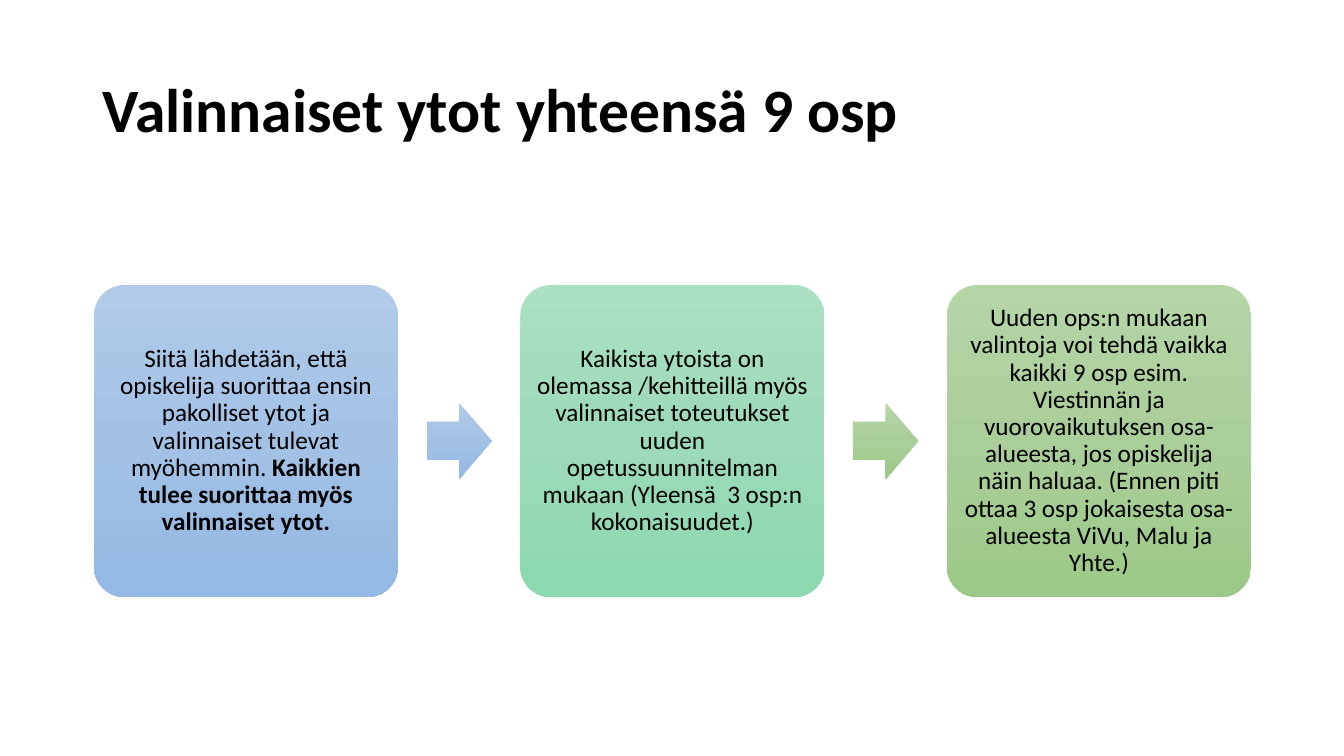
from copy import deepcopy

from pptx import Presentation
from pptx.dml.color import RGBColor
from pptx.enum.shapes import MSO_SHAPE
from pptx.enum.text import MSO_ANCHOR, MSO_AUTO_SIZE, PP_ALIGN
from pptx.oxml.ns import qn
from pptx.util import Emu, Pt

EMU_PER_PX = 914400 / 100.8
BLUE = ("B1CBE9", "A3C1E5", "93B9E4")
MINT = ("ABE0C3", "9DDAB9", "8CD8AF")
GREEN = ("B5D5A7", "AACE9A", "9CC987")

STEPS = [
    (BLUE, ["Siitä lähdetään, että opiskelija suorittaa ensin pakolliset ytot ja "
            "valinnaiset tulevat myöhemmin. ",
            "Kaikkien tulee suorittaa myös valinnaiset ytot."]),
    (MINT, ["Kaikista ytoista on olemassa /kehitteillä myös valinnaiset toteutukset "
            "uuden opetussuunnitelman mukaan (Yleensä  3 osp:n kokonaisuudet.)"]),
    (GREEN, ["Uuden ops:n mukaan valintoja voi tehdä vaikka kaikki 9 osp esim. "
             "Viestinnän ja vuorovaikutuksen osa-alueesta, jos opiskelija näin haluaa. "
             "(Ennen piti ottaa 3 osp jokaisesta osa-alueesta ViVu, Malu ja Yhte.)"]),
]
ARROW_TONES = [BLUE, GREEN]


def px(length):
    """Convert pixels to EMU."""
    return Emu(round(length * EMU_PER_PX))


def color(hex_code):
    """Turn a hex string into a colour."""
    return RGBColor.from_string(hex_code)


def format_run(run, size, bold):
    """Apply the slide's font to a run."""
    run.font.name = "Calibri"
    run.font.size = Pt(size)
    run.font.bold = bold
    run.font.color.rgb = color("000000")


def add_gradient_shape(slide, preset, box, tones):
    """Add a borderless shape with a three-tone gradient running downwards."""
    shape = slide.shapes.add_shape(preset, *map(px, box))
    shape.shadow.inherit = False
    shape.line.fill.background()
    shape.fill.gradient()
    shape.fill.gradient_angle = 270
    stop_list = shape.element.spPr.find(qn("a:gradFill")).find(qn("a:gsLst"))
    stop_list.insert(1, deepcopy(stop_list[0]))
    for stop, tone, position in zip(shape.fill.gradient_stops, tones, (0, 0.5, 1)):
        stop.color.rgb = color(tone)
        stop.position = position
    return shape


def add_title(slide, box):
    """Place and format the title placeholder."""
    title = slide.shapes.title
    title.left, title.top, title.width, title.height = map(px, box)
    frame = title.text_frame
    frame.text = "Valinnaiset ytot yhteensä 9 osp"
    frame.vertical_anchor = MSO_ANCHOR.MIDDLE
    frame.auto_size = MSO_AUTO_SIZE.NONE
    heading = frame.paragraphs[0]
    heading.alignment = PP_ALIGN.LEFT
    heading.line_spacing = 0.9
    format_run(heading.runs[0], 44, True)


def add_card(slide, box, tones, phrases):
    """Add a rounded card whose second phrase, if any, is bold."""
    card = add_gradient_shape(slide, MSO_SHAPE.ROUNDED_RECTANGLE, box, tones)
    card.adjustments[0] = 0.1
    frame = card.text_frame
    frame.word_wrap = True
    frame.vertical_anchor = MSO_ANCHOR.MIDDLE
    frame.margin_left = frame.margin_right = px(7)
    frame.margin_top = frame.margin_bottom = px(7)
    message = frame.paragraphs[0]
    message.alignment = PP_ALIGN.CENTER
    message.line_spacing = 0.9
    for index, phrase in enumerate(phrases):
        run = message.add_run()
        run.text = phrase
        format_run(run, 18, index == 1)


def add_process(slide, box):
    """Lay out the cards evenly with an arrow centred in each gap."""
    left, top, width, height = box
    card_width, arrow_width, arrow_height = 304, 65, 76
    pitch = (width - card_width) / (len(STEPS) - 1)
    for index, (tones, phrases) in enumerate(STEPS):
        add_card(slide, (left + index * pitch, top, card_width, height), tones, phrases)
    arrow_left = left + (card_width + pitch - arrow_width) / 2
    arrow_top = top + (height - arrow_height) / 2
    for index, tones in enumerate(ARROW_TONES):
        arrow_box = (arrow_left + index * pitch, arrow_top, arrow_width, arrow_height)
        add_gradient_shape(slide, MSO_SHAPE.RIGHT_ARROW, arrow_box, tones)


def main():
    """Build and save the slide."""
    presentation = Presentation()
    presentation.slide_width, presentation.slide_height = px(1344), px(756)
    slide = presentation.slides.add_slide(presentation.slide_layouts[5])
    add_title(slide, (92, 40, 1159, 146))
    add_process(slide, (94, 285, 1157, 312))
    presentation.save("out.pptx")


if __name__ == "__main__":
    main()
